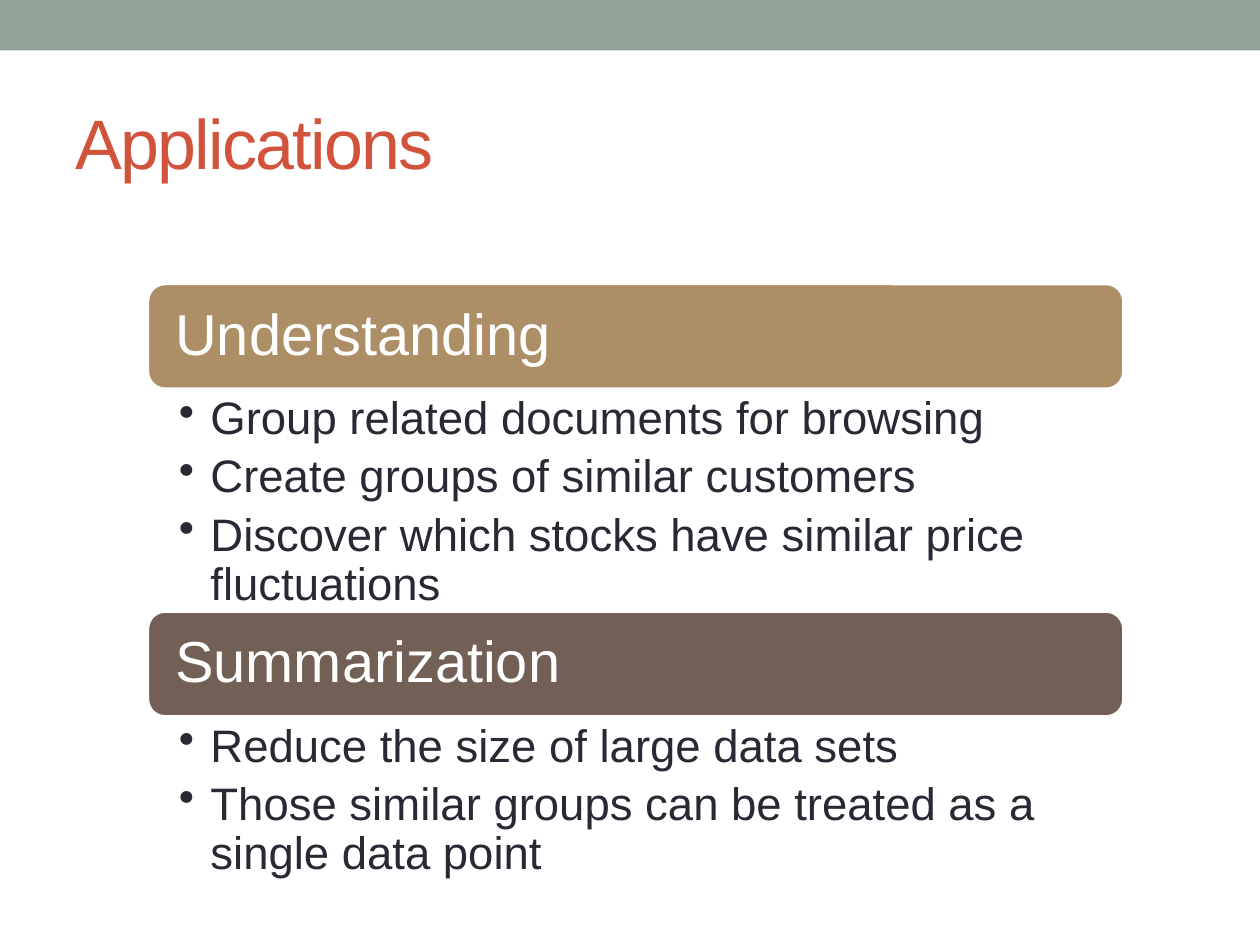
"""Build the Applications slide: a title and two headed bullet lists."""
from dataclasses import dataclass

from lxml.etree import SubElement
from pptx import Presentation
from pptx.dml.color import RGBColor as Rgb
from pptx.enum.shapes import MSO_SHAPE as Shape
from pptx.enum.text import MSO_ANCHOR as Anchor, PP_ALIGN as Align
from pptx.oxml.ns import qn
from pptx.util import Inches, Pt


@dataclass(frozen=True)
class Theme:
    font: str = "Arial"
    band: str = "93A299"
    accent: str = "D2533C"
    ink: str = "292934"
    paper: str = "FFFFFF"
    title_size: int = 40
    heading_size: int = 33
    bullet_size: int = 26
    outline: float = 2.08
    leading: float = 0.9


class Composer:
    columns, rows = 20, 15

    def __init__(self, deck, theme):
        self.theme = theme
        self.column = deck.slide_width / self.columns
        self.row = deck.slide_height / self.rows
        self.page = deck.slides.add_slide(deck.slide_layouts[6])

    def place(self, left, top, width, height):
        return (round(left * self.column), round(top * self.row),
                round(width * self.column), round(height * self.row))

    def panel(self, kind, area, color, outline=None):
        box = self.page.shapes.add_shape(kind, *self.place(*area))
        box.shadow.inherit = False
        box.fill.solid()
        box.fill.fore_color.rgb = Rgb.from_string(color)
        if outline:
            box.line.color.rgb = Rgb.from_string(outline)
            box.line.width = Pt(self.theme.outline)
        else:
            box.line.fill.background()
        return box

    def frame(self, box, anchor, left=0.1, right=0.1):
        frame = box.text_frame
        frame.word_wrap = True
        frame.vertical_anchor = anchor
        frame.margin_left, frame.margin_right = Inches(left), Inches(right)
        return frame

    def set_text(self, para, text, size, color):
        para.text = text
        para.alignment = Align.LEFT
        para.font.name = self.theme.font
        para.font.size = Pt(size)
        para.font.color.rgb = Rgb.from_string(color)
        return para._p.get_or_add_pPr()

    def title(self, text, area):
        box = self.page.shapes.add_textbox(*self.place(*area))
        para = self.frame(box, Anchor.MIDDLE).paragraphs[0]
        props = self.set_text(para, text, self.theme.title_size, self.theme.accent)
        props.find(qn("a:defRPr")).set("spc", "-100")

    def heading(self, text, area, color):
        box = self.panel(Shape.ROUNDED_RECTANGLE, area, color, self.theme.paper)
        para = self.frame(box, Anchor.MIDDLE, 0.18, 0.18).paragraphs[0]
        para.line_spacing = self.theme.leading
        self.set_text(para, text, self.theme.heading_size, self.theme.paper)

    def bullets(self, items, area):
        box = self.page.shapes.add_textbox(*self.place(*area))
        frame = self.frame(box, Anchor.TOP, 0.25, 0.26)
        size = self.theme.bullet_size
        for index, item in enumerate(items):
            para = frame.add_paragraph() if index else frame.paragraphs[0]
            para.line_spacing = self.theme.leading
            para.space_after = Pt(size * 0.2)
            props = self.set_text(para, item, size, self.theme.ink)
            props.set("marL", str(Inches(0.25)))
            props.set("indent", str(Inches(-0.25)))
            bullet = SubElement(props, qn("a:buChar"), char="•")
            props.find(qn("a:defRPr")).addprevious(bullet)


def main():
    deck = Presentation()
    deck.slide_width, deck.slide_height = Inches(10), Inches(7.5)
    theme = Theme()
    composer = Composer(deck, theme)
    composer.panel(Shape.RECTANGLE, (0, 0, composer.columns, 0.8), theme.band)
    composer.title("Applications", (1, 1.16, 18, 2.16))

    sections = [
        ("Understanding", "AD8F67", 3.52, [
            "Group related documents for browsing",
            "Create groups of similar customers",
            "Discover which stocks have similar price fluctuations"]),
        ("Summarization", "726056", 2.62, [
            "Reduce the size of large data sets",
            "Those similar groups can be treated as a single data point"]),
    ]
    left, top, width, heading_height = 2.34, 4.5, 15.5, 1.68
    for name, color, list_height, items in sections:
        composer.heading(name, (left, top, width, heading_height), color)
        top += heading_height
        composer.bullets(items, (left, top, width, list_height))
        top += list_height
    deck.save("out.pptx")


if __name__ == "__main__":
    main()
